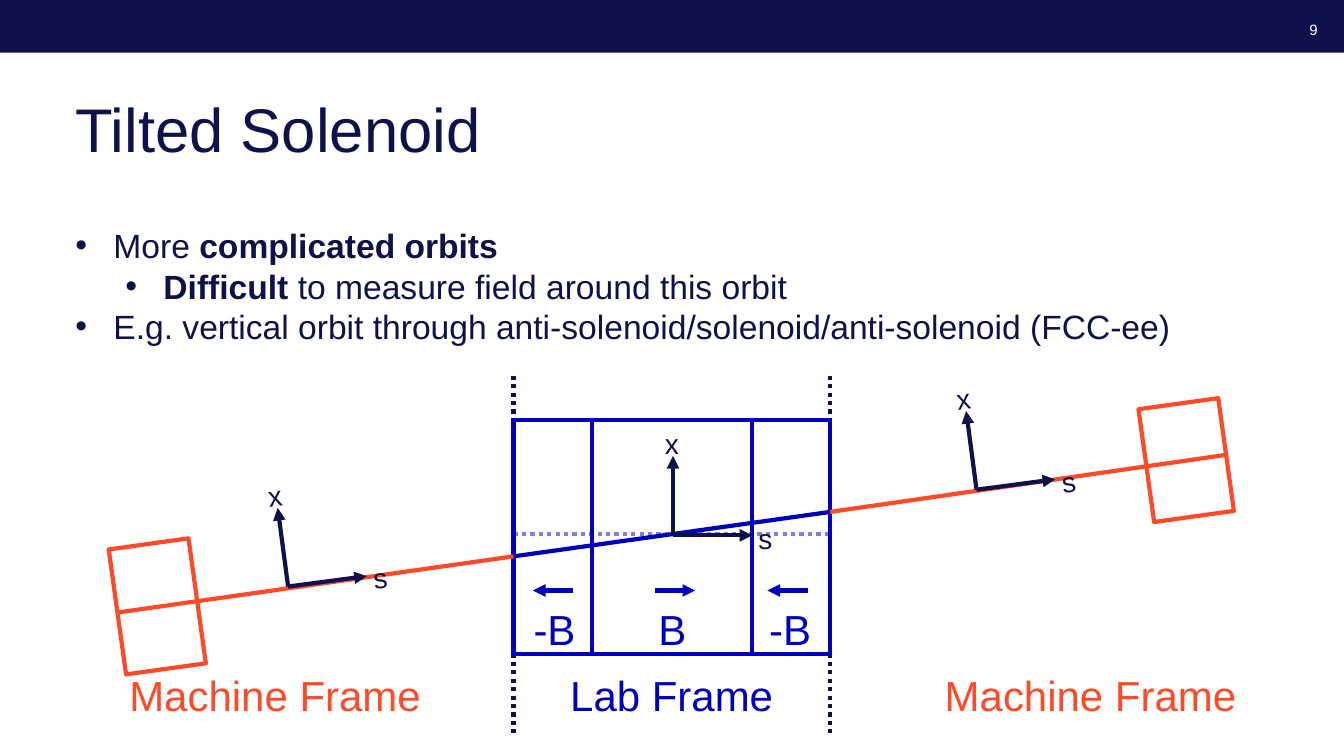
from math import cos, radians, sin

from pptx import Presentation
from pptx.dml.color import RGBColor
from pptx.enum.dml import MSO_LINE
from pptx.enum.shapes import MSO_CONNECTOR, MSO_SHAPE
from pptx.enum.text import MSO_ANCHOR, MSO_AUTO_SIZE, PP_ALIGN
from pptx.oxml.ns import qn
from pptx.util import Cm, Pt

NAVY = RGBColor(0x0F, 0x12, 0x4A)
BLUE = RGBColor(0x00, 0x00, 0xBC)
PALE_BLUE = RGBColor(0x7F, 0x7F, 0xDD)
ORANGE = RGBColor(0xFF, 0x4A, 0x29)
WHITE = RGBColor(0xFF, 0xFF, 0xFF)

RECT = MSO_SHAPE.RECTANGLE
STRAIGHT = MSO_CONNECTOR.STRAIGHT
DOTTED = MSO_LINE.ROUND_DOT
LEFT, CENTER, RIGHT = PP_ALIGN.LEFT, PP_ALIGN.CENTER, PP_ALIGN.RIGHT
TOP, MIDDLE = MSO_ANCHOR.TOP, MSO_ANCHOR.MIDDLE
NO_AUTOFIT = MSO_AUTO_SIZE.NONE

BULLETS = [
    (0, [("More ", False), ("complicated orbits", True)]),
    (1, [("Difficult ", True), ("to measure field around this orbit", False)]),
    (0, [("E.g. vertical orbit through anti-solenoid/solenoid/anti-solenoid (FCC-ee)", False)]),
]


def style(item, formats):
    for name, value in formats.items():
        setattr(item, name, value)


def write(p, text, size, color, bold=False):
    r = p.add_run()
    r.text = text
    style(r.font, {"name": "Arial", "size": Pt(size), "bold": bold})
    r.font.color.rgb = color


def add_label(s, box, text, size, color, align=CENTER, spacing=37, anchor=TOP, rotation=0):
    sp = s.shapes.add_textbox(*map(Cm, box))
    sp.rotation = rotation
    style(sp.text_frame, {"word_wrap": True, "vertical_anchor": anchor})
    p = sp.text_frame.paragraphs[0]
    style(p, {"alignment": align, "line_spacing": Pt(spacing)})
    write(p, text, size, color)


def add_line(s, start, end, color, arrow=False, dash=None):
    line = s.shapes.add_connector(STRAIGHT, *map(Cm, (*start, *end)))
    line.line.color.rgb = color
    line.line.width = Pt(3)
    if dash:
        line.line.dash_style = dash
    properties = line._element.spPr
    if arrow:
        ln = properties.find(qn("a:ln"))
        ln.append(ln.makeelement(qn("a:tailEnd"), {"type": "triangle"}))
    properties.append(properties.makeelement(qn("a:effectLst"), {}))


def add_outline(s, box, color, rotation=0):
    sp = s.shapes.add_shape(RECT, *map(Cm, box))
    sp.shadow.inherit = False
    sp.fill.background()
    sp.line.color.rgb = color
    sp.line.width = Pt(3)
    sp.rotation = rotation


def add_banner(s, left, top, width, height):
    sp = s.shapes.add_shape(RECT, *map(Cm, (left, top, width, height)))
    sp.shadow.inherit = False
    sp.fill.solid()
    sp.fill.fore_color.rgb = NAVY
    sp.line.fill.background()
    number_box = (left + width - 1.48, top + 0.36, 1.07, 0.63)
    add_label(s, number_box, "9", 10.7, WHITE, RIGHT, 16.5, MIDDLE)


def add_title(s, left, top, width, height):
    title = s.shapes.title
    style(title, {"left": Cm(left), "top": Cm(top), "width": Cm(width), "height": Cm(height)})
    style(title.text_frame, {"vertical_anchor": TOP, "auto_size": NO_AUTOFIT})
    p = title.text_frame.paragraphs[0]
    style(p, {"alignment": LEFT, "line_spacing": Pt(54)})
    write(p, "Tilted Solenoid", 44, NAVY)


def add_bullets(s, left, top, width, height):
    tf = s.shapes.add_textbox(*map(Cm, (left, top, width, height))).text_frame
    tf.word_wrap = True
    for i, (level, runs) in enumerate(BULLETS):
        p = tf.add_paragraph() if i else tf.paragraphs[0]
        style(p, {"level": level, "line_spacing": Pt(29)})
        pPr = p._p.get_or_add_pPr()
        pPr.set("marL", str(Cm(0.96 + 1.26 * level)))
        pPr.set("indent", str(Cm(-0.96)))
        for tag, attributes in (("a:buFont", {"typeface": "Arial"}), ("a:buChar", {"char": "•"})):
            pPr.append(pPr.makeelement(qn(tag), attributes))
        for text, bold in runs:
            write(p, text, 24, NAVY, bold)


def add_axes(s, x, y, rotation=0):
    """Draw the s and x axes from the origin (x, y), turned by rotation degrees."""
    angle = radians(rotation)

    def turned(dx, dy):
        return x + dx * cos(angle) - dy * sin(angle), y + dx * sin(angle) + dy * cos(angle)

    axes = [("s", (2, 0), (2.59, -0.22), LEFT), ("x", (0, -2), (-0.03, -2.63), CENTER)]
    for name, tip, label, align in axes:
        add_line(s, (x, y), turned(*tip), NAVY, arrow=True)
        cx, cy = turned(*label)
        add_label(s, (cx - 0.69, cy - 0.7, 1.38, 1.4), name, 20, NAVY, align, rotation=rotation)


def add_machine_frame(s, left, top, width, track, magnet, origin, label_x):
    """Place a tilted track, its end magnet, axes and name; offsets are from the box corner."""
    start_y, end_y = track
    add_line(s, (left, top + start_y), (left + width, top + end_y), ORANGE)
    magnet_x, magnet_y, magnet_height = magnet
    add_outline(s, (left + magnet_x, top + magnet_y, 2.03, magnet_height), ORANGE, -7.9)
    add_axes(s, left + origin[0], top + origin[1], -7.5)
    add_label(s, (left + label_x, top + 7.24, 8.03, 1.5), "Machine Frame", 30, ORANGE)


def add_lab_frame(s, left, top, width, height):
    right, axis_y = left + width, top + 3.99
    add_line(s, (left, axis_y), (right, axis_y), PALE_BLUE, dash=DOTTED)
    for x in (left, right):
        add_line(s, (x, top), (x, top + height), NAVY, dash=DOTTED)
    for inset in (0, 1.97):
        add_outline(s, (left + inset, top + 1.12, width - 2 * inset, 5.9), BLUE)
    add_line(s, (left, axis_y + 0.56), (right, axis_y - 0.56), BLUE)
    add_axes(s, left + width / 2 + 0.03, axis_y + 0.03)

    fields = [("-B", 1.0, -1), ("B", 4.07, 1), ("-B", 6.91, -1)]
    for i, (name, arrow_x, direction) in enumerate(fields):
        x, y, half = left + arrow_x, top + 5.41, 0.51 * direction
        add_line(s, (x - half, y), (x + half, y), BLUE, arrow=True)
        add_label(s, (left + 0.16 + 2.97 * i, top + 5.59, 1.75, 1.5), name, 30, BLUE)
    add_label(s, (left, top + 7.24, width, 1.5), "Lab Frame", 30, BLUE)


def main():
    prs = Presentation()
    prs.slide_width, prs.slide_height = Cm(33.87), Cm(19.05)
    s = prs.slides.add_slide(prs.slide_layouts[5])
    add_banner(s, 0, 0, 33.87, 1.33)
    add_title(s, 1.65, 2.13, 30.6, 2.97)
    add_bullets(s, 1.65, 5.54, 30.6, 3.28)
    add_lab_frame(s, 12.94, 9.47, 7.98, 9)
    add_machine_frame(s, 2.92, 9.47, 10.02, track=(5.97, 4.55), magnet=(0.03, 4.22, 3.18),
                      origin=(4.34, 5.31), label_x=0)
    add_machine_frame(s, 20.92, 9.47, 9.99, track=(3.43, 1.99), magnet=(7.96, 0.69, 2.87),
                      origin=(3.69, 2.87), label_x=2.55)
    prs.save("out.pptx")


if __name__ == "__main__":
    main()
